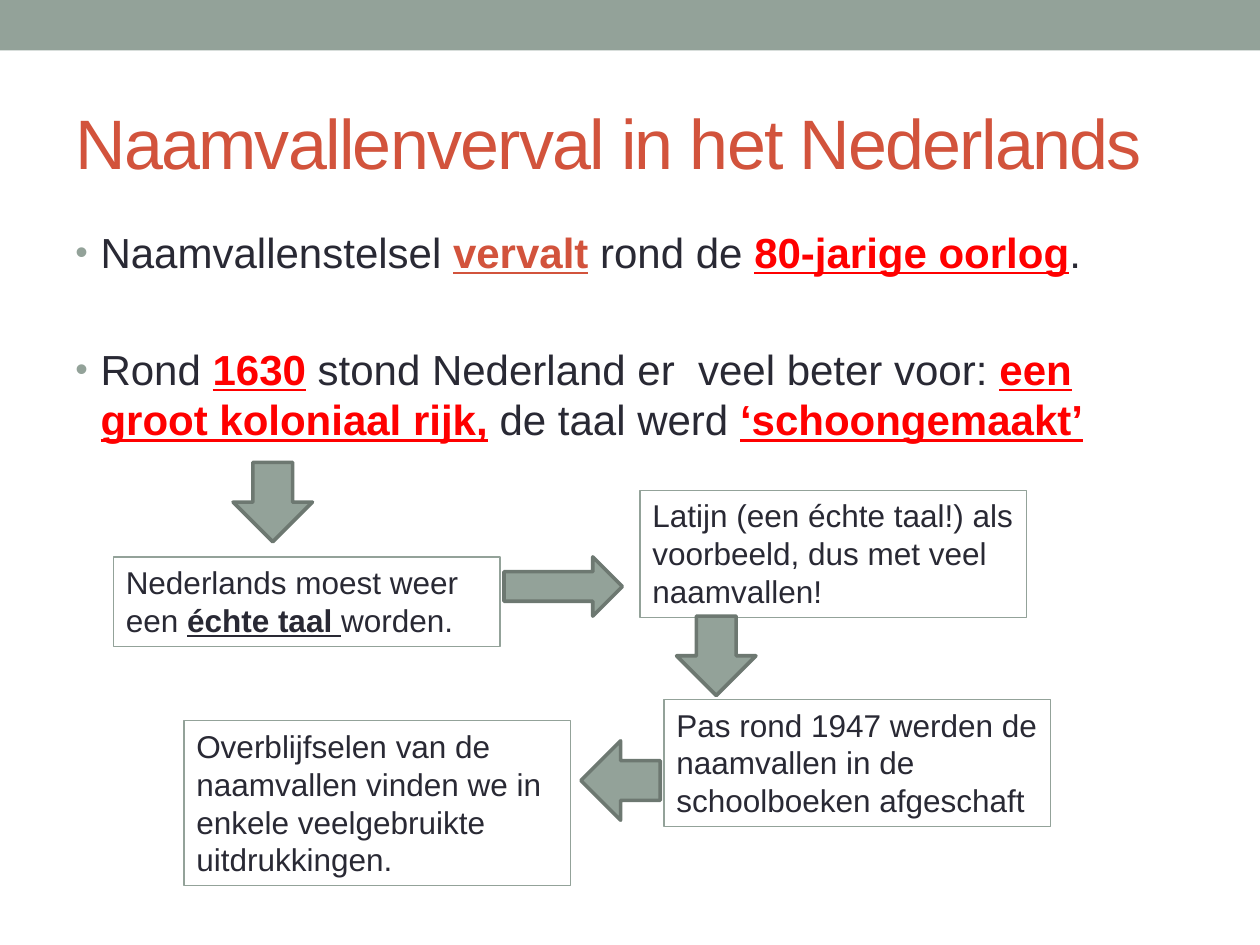
from dataclasses import dataclass

from lxml.etree import SubElement
from pptx import Presentation
from pptx.dml.color import RGBColor
from pptx.enum.shapes import MSO_SHAPE as Form
from pptx.enum.text import MSO_ANCHOR as Anchor, PP_ALIGN as Align
from pptx.oxml.ns import qn
from pptx.util import Inches, Pt

COLS, ROWS = 100, 75
CELL = Inches(0.1)
SAGE, EDGE, INK, RUST, RED = "93A299", "6D7871", "292934", "D2533C", "FF0000"


@dataclass
class Area:
    """A place on the grid, in columns and rows."""
    col: float
    row: float
    wide: float
    high: float

    def place(self) -> list[int]:
        return [round(n * CELL) for n in (self.col, self.row, self.wide, self.high)]


@dataclass
class Span:
    text: str
    color: str = INK
    strong: bool = False


@dataclass
class Box:
    area: Area
    spans: list[Span]


@dataclass
class Arrow:
    area: Area
    form: Form = Form.DOWN_ARROW
    turn: int = 0


TITLE = Span("Naamvallenverval in het Nederlands", RUST)
POINTS = [
    [Span("Naamvallenstelsel "), Span("vervalt", RUST, True), Span(" rond de "),
     Span("80-jarige oorlog", RED, True), Span(".")],
    [Span("Rond "), Span("1630", RED, True),
     Span(" stond Nederland er  veel beter voor: "),
     Span("een groot koloniaal rijk,", RED, True), Span(" de taal werd "),
     Span("‘schoongemaakt’", RED, True)],
]
GAPS = [4.8, 38]  # points above each bullet
WIDE, SIDE = 30.7, 6.3
BOXES = [
    Box(Area(9, 44.2, WIDE, 7.1),
        [Span("Nederlands moest weer een "), Span("échte taal ", INK, True),
         Span("worden.")]),
    Box(Area(50.8, 38.9, WIDE, 10.1),
        [Span("Latijn (een échte taal!) als voorbeeld, dus met veel naamvallen!")]),
    Box(Area(52.7, 55.5, WIDE, 10.1),
        [Span("Pas rond 1947 werden de naamvallen in de schoolboeken afgeschaft")]),
    Box(Area(14.6, 57.2, WIDE, 13.1),
        [Span("Overblijfselen van de naamvallen vinden we in enkele "
              "veelgebruikte uitdrukkingen.")]),
]
ARROWS = [
    Arrow(Area(18.5, 36.7, SIDE, SIDE)),
    Arrow(Area(40, 44.2, 9.4, 4.7), Form.RIGHT_ARROW),
    Arrow(Area(53.7, 48.9, SIDE, SIDE)),
    Arrow(Area(46.1, 58.8, SIDE, SIDE), turn=90),
]


def tint(code: str) -> RGBColor:
    return RGBColor.from_string(code)


def write(para, spans: list[Span], size: float) -> None:
    para.alignment = Align.LEFT
    for span in spans:
        run = para.add_run()
        run.text = span.text
        font = run.font
        font.name, font.size = "Arial", Pt(size)
        font.color.rgb = tint(span.color)
        font.bold = font.underline = span.strong


def add_bullet(para) -> None:
    props = para._p.get_or_add_pPr()
    props.set("marL", str(Inches(0.2)))
    props.set("indent", str(-Inches(0.2)))
    color = SubElement(props, qn("a:buClr"))
    SubElement(color, qn("a:srgbClr"), val=SAGE)
    SubElement(props, qn("a:buSzPct"), val="85000")
    SubElement(props, qn("a:buFont"), typeface="Arial")
    SubElement(props, qn("a:buChar"), char="•")


def add_form(slide, form: Form, area: Area, fill: str = "", line: str = "",
             width: float = 0.75):
    """Draw a preset shape; an empty colour means no fill or no line."""
    shape = slide.shapes.add_shape(form, *area.place())
    shape.shadow.inherit = False
    if fill:
        shape.fill.solid()
        shape.fill.fore_color.rgb = tint(fill)
    else:
        shape.fill.background()
    if line:
        shape.line.color.rgb = tint(line)
        shape.line.width = Pt(width)
    else:
        shape.line.fill.background()
    return shape


def add_text(slide, area: Area, anchor: Anchor):
    frame = slide.shapes.add_textbox(*area.place()).text_frame
    frame.word_wrap = True
    frame.vertical_anchor = anchor
    return frame


def add_title(slide) -> None:
    para = add_text(slide, Area(5, 5.8, 90, 10.8), Anchor.MIDDLE).paragraphs[0]
    write(para, [TITLE], 40)
    para.runs[0].font._element.set("spc", "-100")


def add_points(slide) -> None:
    frame = add_text(slide, Area(5, 17.5, 90, 53.3), Anchor.TOP)
    for i, (spans, gap) in enumerate(zip(POINTS, GAPS)):
        para = frame.add_paragraph() if i else frame.paragraphs[0]
        para.space_before = Pt(gap)
        add_bullet(para)
        write(para, spans, 24)


def add_box(slide, box: Box) -> None:
    frame = add_form(slide, Form.RECTANGLE, box.area, line=SAGE).text_frame
    frame.word_wrap = True
    frame.vertical_anchor = Anchor.TOP
    write(frame.paragraphs[0], box.spans, 18)


def add_arrow(slide, arrow: Arrow) -> None:
    shape = add_form(slide, arrow.form, arrow.area, SAGE, EDGE, 2.08)
    shape.rotation = arrow.turn


def main() -> None:
    deck = Presentation()
    deck.slide_width, deck.slide_height = COLS * CELL, ROWS * CELL
    slide = deck.slides.add_slide(deck.slide_layouts[6])
    add_form(slide, Form.RECTANGLE, Area(0, 0, COLS, 4), SAGE)
    add_title(slide)
    add_points(slide)
    for box in BOXES:
        add_box(slide, box)
    for arrow in ARROWS:
        add_arrow(slide, arrow)
    deck.save("out.pptx")


if __name__ == "__main__":
    main()
